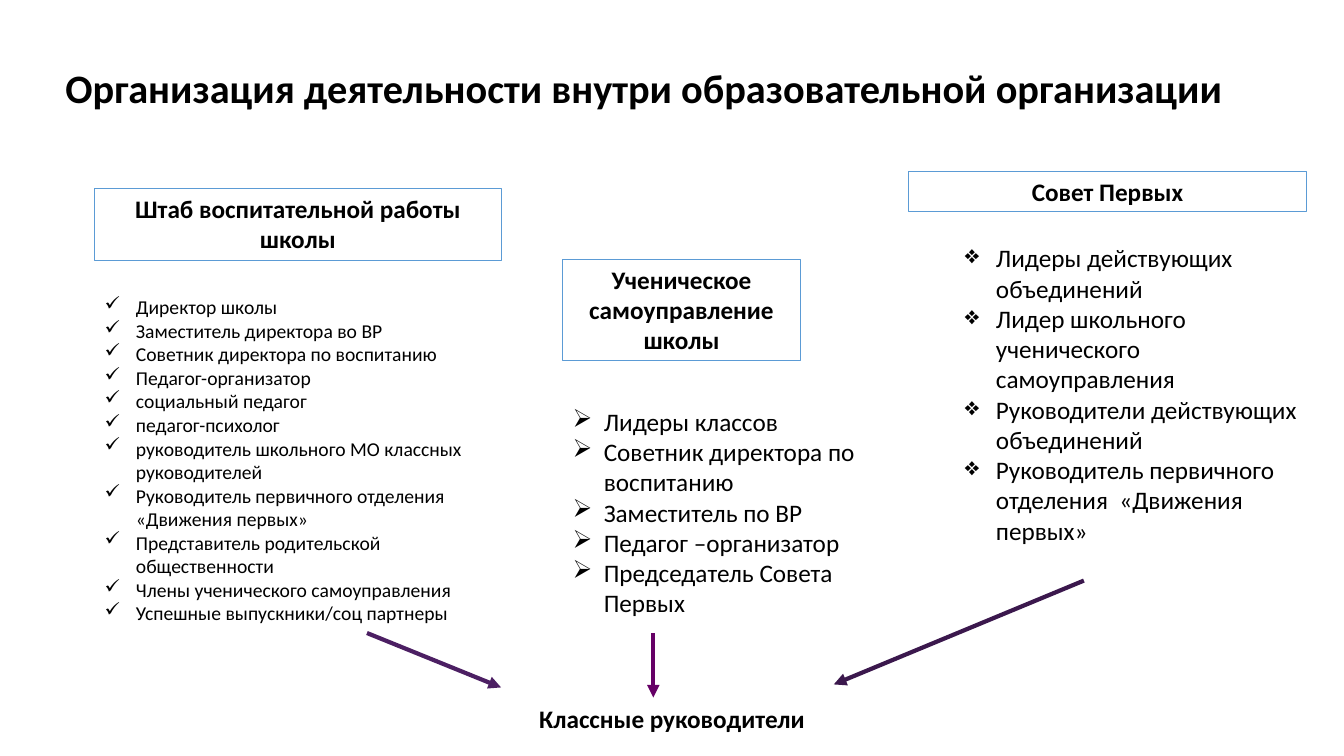
from lxml.etree import SubElement
from pptx import Presentation
from pptx.dml.color import RGBColor
from pptx.enum.shapes import MSO_CONNECTOR, MSO_SHAPE
from pptx.enum.text import MSO_ANCHOR, PP_ALIGN
from pptx.oxml.ns import qn
from pptx.util import Inches, Pt

color = RGBColor.from_string

deck = Presentation()
deck.slide_width, deck.slide_height = Inches(13.33), Inches(7.5)
slide = deck.slides.add_slide(deck.slide_layouts[6])


def add_text(text, left, top, width, height, size=18, bold=False, align=PP_ALIGN.LEFT,
             anchor=MSO_ANCHOR.TOP, spacing=1.0, border=None, bullet=None):
    area = [Inches(value) for value in (left, top, width, height)]
    if border:
        box = slide.shapes.add_shape(MSO_SHAPE.RECTANGLE, *area)
        box.shadow.inherit = False
        box.fill.background()
        box.line.color.rgb = color(border)
        box.line.width = Pt(0.75)
    else:
        box = slide.shapes.add_textbox(*area)
    frame = box.text_frame
    frame.word_wrap = True
    frame.vertical_anchor = anchor
    frame.text = text
    for paragraph in frame.paragraphs:
        paragraph.alignment = align
        paragraph.line_spacing = spacing
        if bullet:
            properties = paragraph._p.get_or_add_pPr()
            properties.set("marL", str(Inches(0.31)))
            properties.set("indent", str(-Inches(0.31)))
            SubElement(properties, qn("a:buChar"), char=bullet)
        paragraph.font.name = "Calibri"
        paragraph.font.size = Pt(size)
        paragraph.font.bold = bold
        paragraph.font.color.rgb = color("000000")


# Title
add_text("Организация деятельности внутри образовательной организации",
         0.37, 0.4, 12.04, 0.99, size=28.8, bold=True, align=PP_ALIGN.CENTER,
         anchor=MSO_ANCHOR.MIDDLE, spacing=0.9)

# Framed names of the three bodies
bodies = [
    ("Штаб воспитательной работы школы", 0.94, 1.87, 4.03, 0.71),
    ("Ученическое самоуправление школы", 5.58, 2.57, 2.36, 1.01),
    ("Совет Первых", 9.01, 1.7, 3.95, 0.4),
]
for body in bodies:
    add_text(*body, bold=True, align=PP_ALIGN.CENTER, border="5B9BD5")

# Members of each body
staff = [
    "Директор школы",
    "Заместитель директора во ВР",
    "Советник директора по воспитанию",
    "Педагог-организатор",
    "социальный педагог",
    "педагог-психолог",
    "руководитель школьного МО классных руководителей",
    "Руководитель первичного отделения  «Движения первых»",
    "Представитель родительской общественности",
    "Члены ученического самоуправления",
    "Успешные выпускники/соц партнеры",
]
pupils = [
    "Лидеры классов",
    "Советник директора по воспитанию",
    "Заместитель по ВР",
    "Педагог –организатор",
    "Председатель Совета Первых",
]
council = [
    "Лидеры действующих объединений",
    "Лидер школьного ученического самоуправления",
    "Руководители действующих объединений",
    "Руководитель первичного отделения  «Движения первых»",
]
add_text("\n".join(staff), 0.94, 2.88, 4.03, 3.4, size=14, bullet="✓")
add_text("\n".join(pupils), 5.58, 3.98, 3.01, 2.22, bullet="➢")
add_text("\n".join(council), 9.47, 2.36, 3.71, 3.43, bullet="❖")

# Class teachers, where all three bodies lead
add_text("Классные руководители", 2.72, 6.93, 7.89, 0.4, bold=True, align=PP_ALIGN.CENTER)

arrows = [
    (3.64, 6.28, 4.97, 6.82, "4C1F63"),
    (6.48, 6.28, 6.48, 6.92, "660066"),
    (10.75, 5.76, 8.27, 6.79, "3B184D"),
]
for *ends, shade in arrows:
    arrow = slide.shapes.add_connector(MSO_CONNECTOR.STRAIGHT, *[Inches(end) for end in ends])
    arrow.line.color.rgb = color(shade)
    arrow.line.width = Pt(3)
    SubElement(arrow.line._get_or_add_ln(), qn("a:tailEnd"), type="triangle")
    SubElement(arrow._element.spPr, qn("a:effectLst"))

deck.save("out.pptx")
